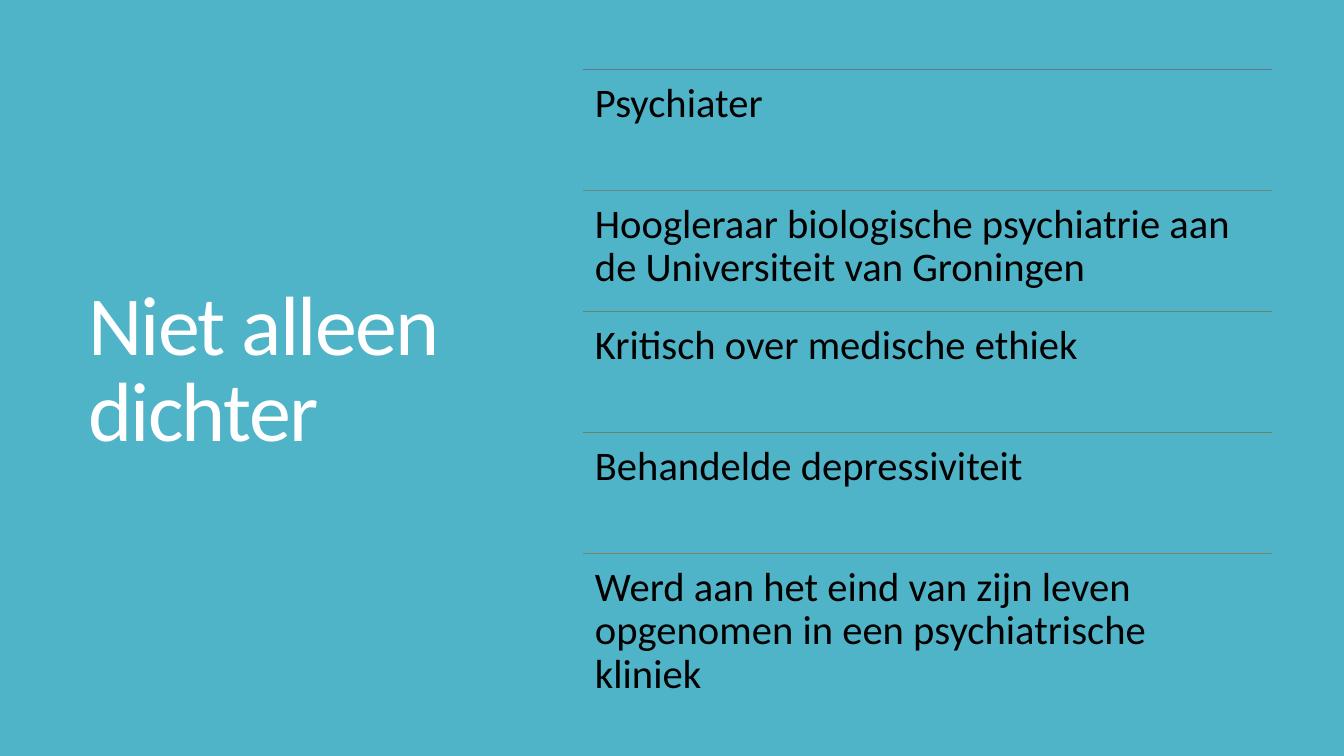
import pptx
import pptx.util
import pptx.dml.color
import pptx.enum.shapes
import pptx.enum.text
import pptx.oxml

RGBColor = pptx.dml.color.RGBColor
TEAL = RGBColor(0x50, 0xB4, 0xC8)
WHITE = RGBColor(0xFF, 0xFF, 0xFF)
BLACK = RGBColor(0, 0, 0)
SLATE = RGBColor(0x65, 0x76, 0x89)
STEEL = RGBColor(0x63, 0x88, 0x87)
JADE = RGBColor(0x61, 0x87, 0x70)
MOSS = RGBColor(0x65, 0x86, 0x5F)
OLIVE = RGBColor(0x7A, 0x85, 0x5D)

FACTS = [
    ("Psychiater", SLATE),
    ("Hoogleraar biologische psychiatrie aan de Universiteit van Groningen", STEEL),
    ("Kritisch over medische ethiek", JADE),
    ("Behandelde depressiviteit", MOSS),
    ("Werd aan het eind van zijn leven opgenomen in een psychiatrische kliniek", OLIVE),
]
LEFT, TOP, WIDTH, ROW = 583, 70, 689, 121


def px(n):
    return pptx.util.Emu(round(n * 914400 / 100.8))


class Deck:
    font = "Calibri"

    def __init__(self, wide, high):
        self.prs = pptx.Presentation()
        self.prs.slide_width = px(wide)
        self.prs.slide_height = px(high)
        self.slide = self.prs.slides.add_slide(self.prs.slide_layouts[5])
        back = self.slide.background.fill
        back.solid()
        back.fore_color.rgb = TEAL

    def put(self, frame, words, size, color, lead):
        frame.word_wrap = True
        frame.auto_size = pptx.enum.text.MSO_AUTO_SIZE.NONE
        para = frame.paragraphs[0]
        para.alignment = pptx.enum.text.PP_ALIGN.LEFT
        para.line_spacing = lead
        run = para.add_run()
        run.text = words
        run.font.name = self.font
        run.font.size = pptx.util.Pt(size)
        run.font.color.rgb = color
        return run

    def title(self, words, x, y, w, h):
        head = self.slide.shapes.title
        head.left, head.top, head.width, head.height = map(px, (x, y, w, h))
        head.text_frame.vertical_anchor = pptx.enum.text.MSO_ANCHOR.MIDDLE
        run = self.put(head.text_frame, words, 60, WHITE, 0.85)
        run.font._element.set("spc", "-120")

    def rule(self, x, y, w, color):
        kind = pptx.enum.shapes.MSO_CONNECTOR.STRAIGHT
        line = self.slide.shapes.add_connector(kind, px(x), px(y), px(x + w), px(y))
        line.line.color.rgb = color
        line.line.width = pptx.util.Pt(0.75)
        line._element.spPr.append(pptx.oxml.parse_xml(
            '<a:effectLst xmlns:a="http://schemas.openxmlformats.org/drawingml/2006/main"/>'))

    def text(self, words, x, y, w, h):
        frame = self.slide.shapes.add_textbox(px(x), px(y), px(w), px(h)).text_frame
        frame.margin_left = frame.margin_right = px(12)
        frame.margin_top = frame.margin_bottom = px(12)
        self.put(frame, words, 29, BLACK, 0.9)

    def save(self):
        self.prs.save("out.pptx")


def main():
    deck = Deck(1344, 756)
    deck.title("Niet alleen dichter", 78, TOP, 440, 5 * ROW)
    for i, (words, color) in enumerate(FACTS):
        y = TOP + i * ROW
        deck.rule(LEFT, y, WIDTH, color)
        deck.text(words, LEFT, y, WIDTH, ROW)
    deck.save()


if __name__ == "__main__":
    main()
